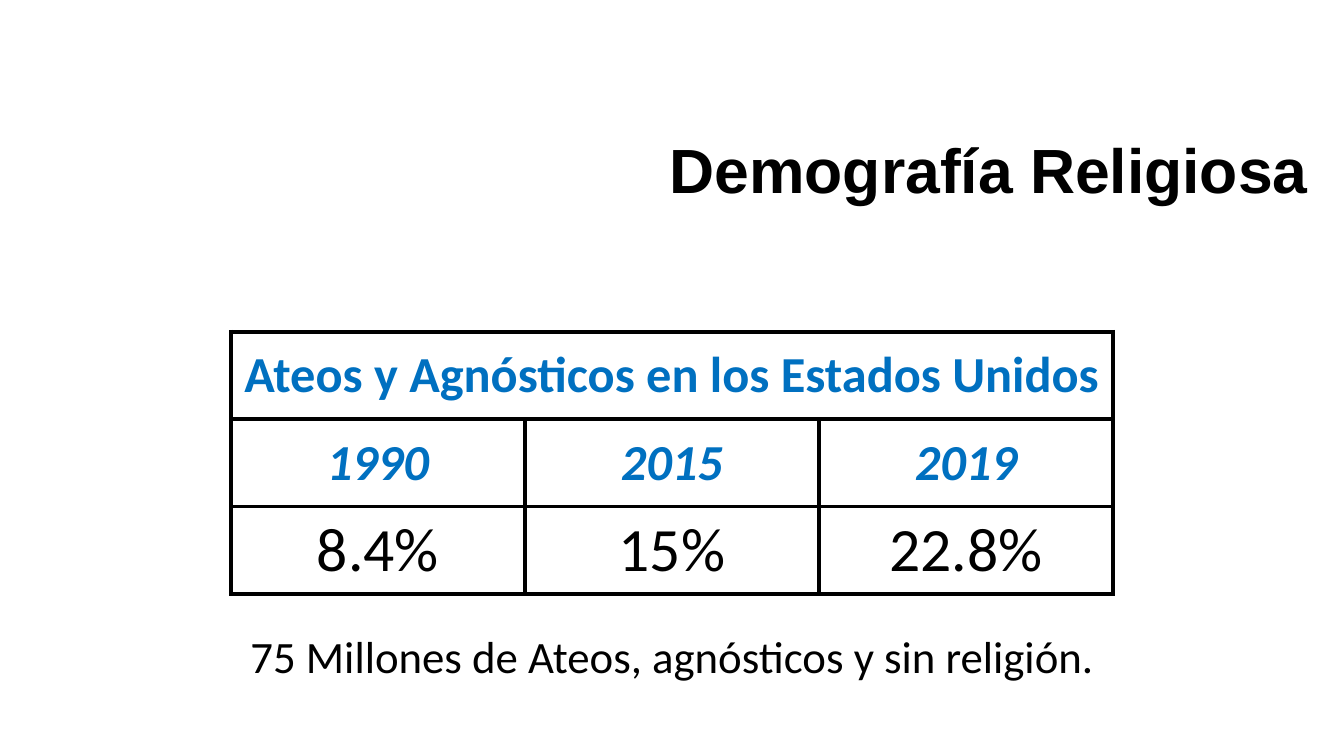
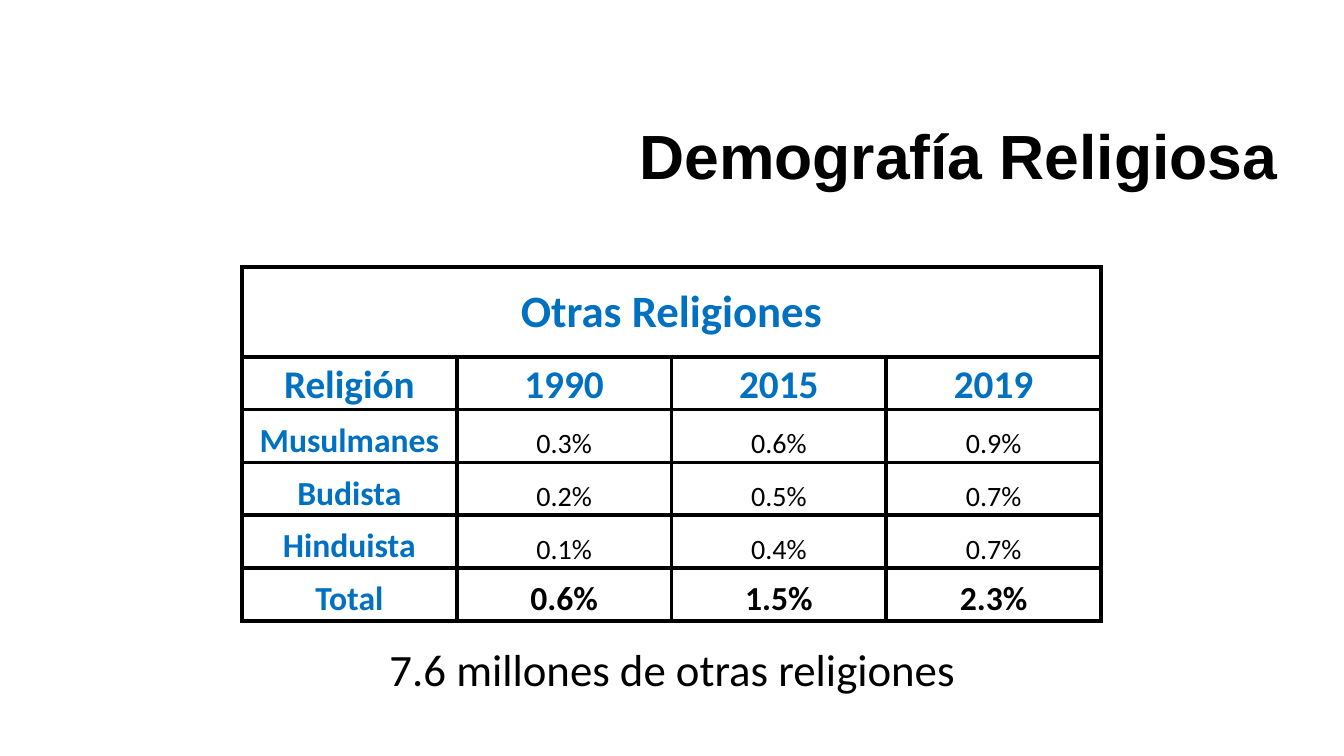
import pptx
import pptx.dml.color
import pptx.enum.text
import pptx.oxml.ns
import pptx.util
from dataclasses import dataclass
from lxml import etree

Inches = pptx.util.Inches
Pt = pptx.util.Pt
Align = pptx.enum.text.PP_ALIGN
Anchor = pptx.enum.text.MSO_ANCHOR


@dataclass(frozen=True)
class TextStyle:
    size: float
    color: str = "000000"
    bold: bool = False
    italic: bool = False
    font: str = "Calibri"


class Theme:
    white = "FFFFFF"
    border = "000000"
    border_width = 3
    cell_margin = 0.01
    blue = "0070C0"
    title = TextStyle(44.6, bold=True, font="Arial")
    note = TextStyle(32)
    # Single-row table
    large_heading = TextStyle(36, blue, bold=True)
    large_year = TextStyle(36, blue, bold=True, italic=True)
    large_value = TextStyle(44)
    # Detailed table
    heading = TextStyle(32, blue, bold=True)
    column_label = TextStyle(28, blue, bold=True)
    row_label = TextStyle(24, blue, bold=True)
    value = TextStyle(20)
    total = TextStyle(24, bold=True)


class Deck:
    def __init__(self):
        self.presentation = pptx.Presentation()
        self.presentation.slide_width = Inches(13.33)
        self.presentation.slide_height = Inches(7.5)
        self.slide = None

    def add_slide(self):
        blank_layout = self.presentation.slide_layouts[6]
        self.slide = self.presentation.slides.add_slide(blank_layout)

    def set_text(self, frame, text, style, alignment):
        paragraph = frame.paragraphs[0]
        paragraph.text = text
        paragraph.alignment = alignment
        font = paragraph.font
        font.name = style.font
        font.size = Pt(style.size)
        font.bold = style.bold
        font.italic = style.italic
        font.color.rgb = pptx.dml.color.RGBColor.from_string(style.color)
        return paragraph

    def set_margins(self, holder, margin):
        holder.margin_left = holder.margin_right = Inches(margin)
        holder.margin_top = holder.margin_bottom = Inches(margin)

    def add_text(self, text, box, style, alignment, anchor, spacing):
        shape = self.slide.shapes.add_textbox(*map(Inches, box))
        frame = shape.text_frame
        frame.word_wrap = True
        frame.vertical_anchor = anchor
        self.set_margins(frame, 0)
        paragraph = self.set_text(frame, text, style, alignment)
        paragraph.line_spacing = spacing

    def add_title(self, text, left, top, width):
        self.add_text(text, (left, top, width, 0.79), Theme.title,
                      Align.RIGHT, Anchor.MIDDLE, 0.81)

    def add_note(self, text, top, height):
        self.add_text(text, (0.92, top, 11.5, height), Theme.note,
                      Align.CENTER, Anchor.TOP, 0.9)

    def add_borders(self, cell):
        properties = cell._tc.get_or_add_tcPr()
        qn = pptx.oxml.ns.qn
        for side in ("a:lnL", "a:lnR", "a:lnT", "a:lnB"):
            line = etree.SubElement(properties, qn(side),
                                    w=str(Pt(Theme.border_width)))
            fill = etree.SubElement(line, qn("a:solidFill"))
            etree.SubElement(fill, qn("a:srgbClr"), val=Theme.border)

    def add_table(self, heading, heading_style, rows, style_of, box,
                  heading_height, body_anchor):
        """Draw a heading across all columns above rows of equal height."""
        width, height = box[2:]
        columns = len(rows[0])
        frame = self.slide.shapes.add_table(
            len(rows) + 1, columns, *map(Inches, box))
        table = frame.table
        for column in table.columns:
            column.width = Inches(width / columns)
        for row in table.rows:
            row.height = Inches((height - heading_height) / len(rows))
        table.rows[0].height = Inches(heading_height)

        # Borders come before the fill in the cell properties
        for cell in table.iter_cells():
            self.add_borders(cell)
            cell.fill.solid()
            cell.fill.fore_color.rgb = pptx.dml.color.RGBColor.from_string(
                Theme.white)

        table.cell(0, 0).merge(table.cell(0, columns - 1))
        self.fill_cell(table.cell(0, 0), heading, heading_style, Anchor.MIDDLE)
        for row_index, row in enumerate(rows):
            for column_index, text in enumerate(row):
                self.fill_cell(table.cell(row_index + 1, column_index), text,
                               style_of(row_index, column_index), body_anchor)

    def fill_cell(self, cell, text, style, anchor):
        self.set_text(cell.text_frame, text, style, Align.CENTER)
        self.set_margins(cell, Theme.cell_margin)
        cell.vertical_anchor = anchor


TITLE = "Demografía Religiosa"
YEARS = ["1990", "2015", "2019"]
RELIGIONS = [
    ["Religión", *YEARS],
    ["Musulmanes", "0.3%", "0.6%", "0.9%"],
    ["Budista", "0.2%", "0.5%", "0.7%"],
    ["Hinduista", "0.1%", "0.4%", "0.7%"],
    ["Total", "0.6%", "1.5%", "2.3%"],
]


def unaffiliated_style(row, column):
    return Theme.large_year if row == 0 else Theme.large_value


def religion_style(row, column):
    if row == 0:
        return Theme.column_label
    if column == 0:
        return Theme.row_label
    return Theme.total if row == len(RELIGIONS) - 1 else Theme.value


def main():
    deck = Deck()

    # Atheists and agnostics
    deck.add_slide()
    deck.add_table("Ateos y Agnósticos en los Estados Unidos",
                   Theme.large_heading, [YEARS, ["8.4%", "15%", "22.8%"]],
                   unaffiliated_style, (2.29, 3.29, 8.75, 2.6), 0.87,
                   Anchor.MIDDLE)
    deck.add_title(TITLE, 1.16, 1.34, 11.82)
    deck.add_note("75 Millones de Ateos, agnósticos y sin religión.", 6.3, 0.89)

    # Other religions
    deck.add_slide()
    deck.add_title(TITLE, 0.92, 1.21, 11.76)
    deck.add_table("Otras Religiones", Theme.heading, RELIGIONS,
                   religion_style, (2.4, 2.65, 8.52, 3.51), 0.89,
                   Anchor.BOTTOM)
    deck.add_note("7.6 millones de otras religiones", 6.43, 0.79)

    deck.presentation.save("out.pptx")


if __name__ == "__main__":
    main()
